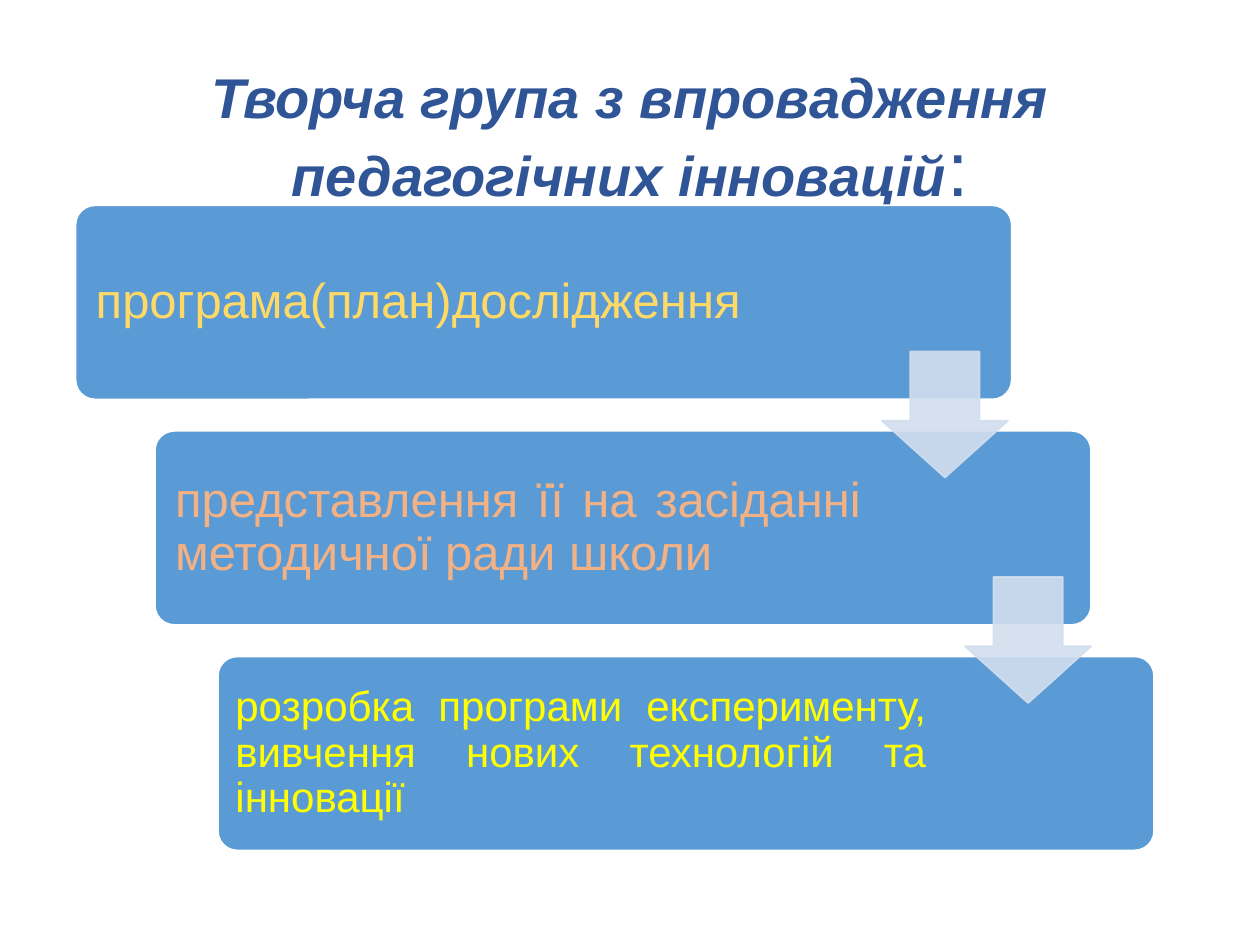
import pptx
import pptx.dml.color
import pptx.enum.shapes
import pptx.enum.text
import pptx.oxml.ns
import pptx.util
from lxml import etree

Inches = pptx.util.Inches
Pt = pptx.util.Pt
SHAPE = pptx.enum.shapes.MSO_SHAPE
ALIGN = pptx.enum.text.PP_ALIGN
qn = pptx.oxml.ns.qn

COLORS = {
    "title": "2F5597", "box": "5B9BD5", "outline": "FFFFFF", "arrow": "D2DEEF",
    "gold": "FFD966", "peach": "F4B183", "yellow": "FFFF00",
}


def rgb(name):
    return pptx.dml.color.RGBColor.from_string(COLORS[name])


class StepSlide:
    """Holds the style and the slide being built."""

    font = "Arial"
    line_spacing = 0.9

    def __init__(self, slide):
        self.slide = slide

    def text(self, at, runs, align, inset=(0.1, 0.05)):
        sp = self.slide.shapes.add_textbox(*map(Inches, at))
        tf = sp.text_frame
        dx, dy = map(Inches, inset)
        frame_format = {
            "word_wrap": True,
            "vertical_anchor": pptx.enum.text.MSO_ANCHOR.MIDDLE,
            "margin_left": dx, "margin_right": dx,
            "margin_top": dy, "margin_bottom": dy,
        }
        for name, value in frame_format.items():
            setattr(tf, name, value)
        p = tf.paragraphs[0]
        p.alignment = align
        p.line_spacing = self.line_spacing
        for words, color, font_format in runs:
            r = p.add_run()
            r.text = words
            r.font.color.rgb = rgb(color)
            for name, value in {"name": self.font, **font_format}.items():
                setattr(r.font, name, value)

    def shape(self, kind, at, adjustments, fill, line, alpha=None):
        sp = self.slide.shapes.add_shape(kind, *map(Inches, at))
        sp.shadow.inherit = False
        for i, value in enumerate(adjustments):
            sp.adjustments[i] = value
        sp.fill.solid()
        sp.fill.fore_color.rgb = rgb(fill)
        sp.line.color.rgb = rgb(line)
        sp.line.width = Pt(1)
        if alpha is not None:
            # Transparency of both fill and outline
            for color in sp._element.spPr.iter(qn("a:srgbClr")):
                etree.SubElement(color, qn("a:alpha"), val=str(alpha * 1000))

    def step(self, left, top, text_width, words, color, size, inset):
        self.shape(SHAPE.ROUNDED_RECTANGLE, (left, top, 7.43, 1.54), [0.1],
                   "box", "outline")
        self.text((left + 0.04, top + 0.045, text_width, 1.45),
                  [(words, color, {"size": Pt(size)})], ALIGN.JUSTIFY, (inset, inset))

    def arrow(self, left, top):
        self.shape(SHAPE.DOWN_ARROW, (left, top, 1, 1), [0.55, 0.45],
                   "arrow", "arrow", alpha=90)


def main():
    prs = pptx.Presentation()
    prs.slide_width, prs.slide_height = Inches(10), Inches(7.5)
    page = StepSlide(prs.slides.add_slide(prs.slide_layouts[6]))

    # Title
    page.text((0.69, 0.4, 8.62, 1.45), [
        ("Творча група з впровадження педагогічних інновацій", "title",
         {"size": Pt(32), "bold": True, "italic": True}),
        (":", "title", {"size": Pt(44)}),
    ], ALIGN.CENTER)

    # Staircase of steps: left, text width, words, colour, size, inset
    first_top, pitch = 1.63, 1.79
    steps = [
        (0.6, 5.77, "програма(план)дослідження", "gold", 28, 0.12),
        (1.23, 5.68, "представлення її на засіданні методичної ради школи",
         "peach", 28, 0.12),
        (1.73, 5.68, "розробка програми експерименту, вивчення нових "
         "технологій та інновації", "yellow", 24, 0.1),
    ]
    for i, (left, *content) in enumerate(steps):
        page.step(left, first_top + i * pitch, *content)

    # Arrows bridging neighbouring steps
    for i, left in enumerate((7, 7.66)):
        page.arrow(left, 2.79 + i * pitch)

    prs.save("out.pptx")


if __name__ == "__main__":
    main()
